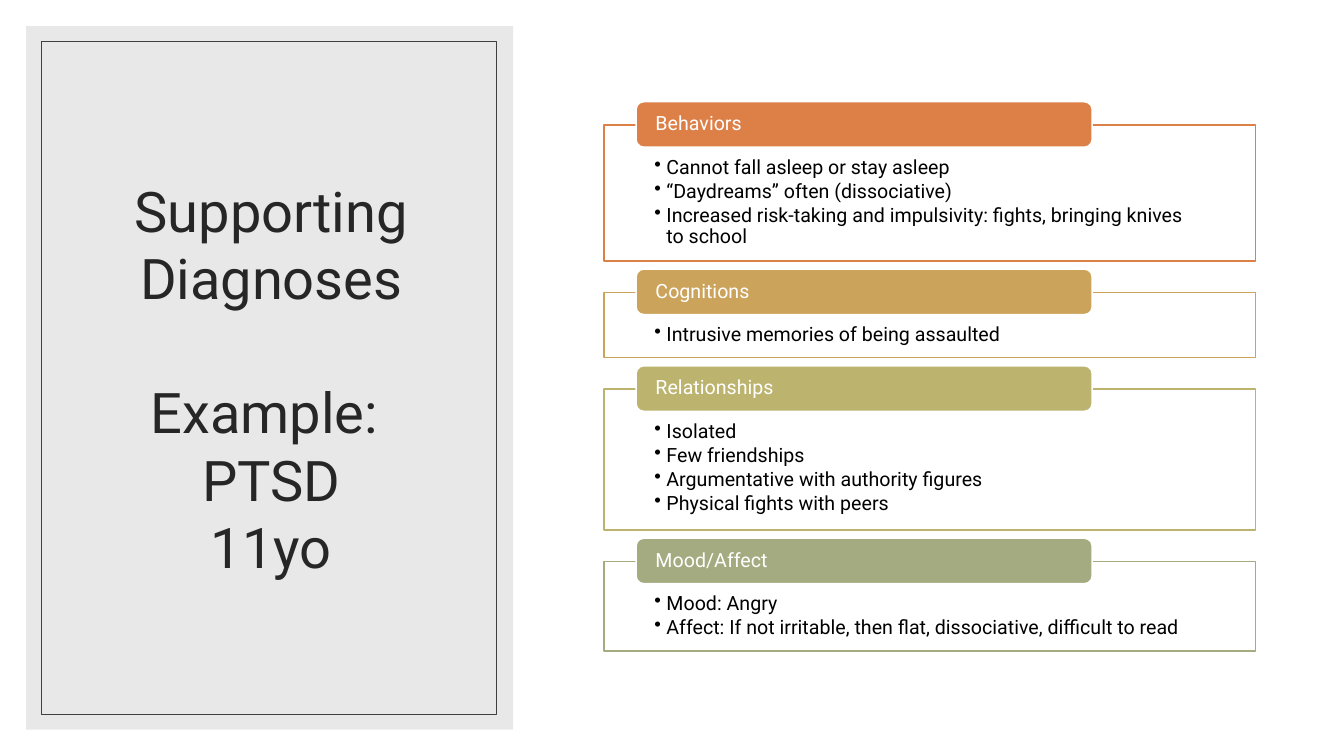
from lxml import etree
from pptx import Presentation
from pptx.dml.color import RGBColor
from pptx.enum.shapes import MSO_SHAPE
from pptx.enum.text import MSO_ANCHOR, PP_ALIGN
from pptx.oxml.ns import qn
from pptx.util import Inches, Pt

RECTANGLE = MSO_SHAPE.RECTANGLE
ROUNDED = MSO_SHAPE.ROUNDED_RECTANGLE
TOP, MIDDLE = MSO_ANCHOR.TOP, MSO_ANCHOR.MIDDLE
LEFT, CENTER = PP_ALIGN.LEFT, PP_ALIGN.CENTER

FONT = "Roboto"
COLORS = {
    "white": "FFFFFF",
    "black": "000000",
    "panel": "E8E8E8",
    "panel_line": "404040",
    "title": "262626",
    "orange": "DD8047",
    "gold": "CCA35B",
    "olive": "BBB36E",
    "sage": "A5AB81",
}
TITLE = ["Supporting Diagnoses", "Example: \vPTSD\v11yo"]
# Heading, colour, frame height in inches, bullets
SECTIONS = [
    ("Behaviors", "orange", 1.35, [
        "Cannot fall asleep or stay asleep",
        "“Daydreams” often (dissociative)",
        "Increased risk-taking and impulsivity: fights, bringing knives to school",
    ]),
    ("Cognitions", "gold", 0.65, ["Intrusive memories of being assaulted"]),
    ("Relationships", "olive", 1.4, [
        "Isolated",
        "Few friendships",
        "Argumentative with authority figures",
        "Physical fights with peers",
    ]),
    ("Mood/Affect", "sage", 0.89, [
        "Mood: Angry",
        "Affect: If not irritable, then flat, dissociative, difficult to read",
    ]),
]
SECTION_GAP = 0.31


def color(name):
    return RGBColor.from_string(COLORS[name])


def add_box(slide, kind, box, fill=None, line=None, line_width=1):
    shape = slide.shapes.add_shape(kind, *(Inches(length) for length in box))
    shape.shadow.inherit = False
    if fill:
        shape.fill.solid()
        shape.fill.fore_color.rgb = color(fill)
    else:
        shape.fill.background()
    if line:
        shape.line.color.rgb = color(line)
        shape.line.width = Pt(line_width)
    else:
        shape.line.fill.background()
    return shape


def write_text(shape, lines, size, text_color, margins, anchor, align, spacing=1.0):
    """Fill the shape with one paragraph per line; margins run left, top, right, bottom."""
    frame = shape.text_frame
    frame.word_wrap = True
    frame.vertical_anchor = anchor
    (frame.margin_left, frame.margin_top,
     frame.margin_right, frame.margin_bottom) = (Inches(margin) for margin in margins)
    frame.text = "\n".join(lines)
    for paragraph in frame.paragraphs:
        paragraph.alignment = align
        paragraph.line_spacing = spacing
        for run in paragraph.runs:
            run.font.name = FONT
            run.font.size = Pt(size)
            run.font.color.rgb = color(text_color)
    return frame.paragraphs


def add_bullet(paragraph):
    properties = paragraph._p.get_or_add_pPr()
    properties.set("marL", str(Inches(0.12)))
    properties.set("indent", str(-Inches(0.12)))
    etree.SubElement(properties, qn("a:buChar")).set("char", "•")


def add_title_panel(slide, left, top, width, height):
    add_box(slide, RECTANGLE, (left, top, width, height), fill="panel")
    inset = 0.15
    border = add_box(
        slide, RECTANGLE,
        (left + inset, top + inset, width - 2 * inset - 0.02, height - 2 * inset),
        line="panel_line", line_width=0.5)
    paragraphs = write_text(border, TITLE, 40, "title", (0.32, 0.05, 0.27, 0.05),
                            MIDDLE, CENTER)
    paragraphs[1].space_before = Pt(48)


def add_section(slide, left, top, width, height, heading, accent, bullets):
    """Draw an outlined bullet box with a heading tab across its top edge."""
    frame = add_box(slide, RECTANGLE, (left, top, width, height), "white", accent)
    paragraphs = write_text(frame, bullets, 14, "black", (0.5, 0.32, 0.5, 0.11),
                            TOP, LEFT, 0.9)
    for paragraph in paragraphs:
        paragraph.space_after = Pt(2)
        add_bullet(paragraph)

    tab = add_box(slide, ROUNDED, (left + 0.32, top - 0.23, width * 0.7, 0.45),
                  accent, "white")
    write_text(tab, [heading], 14, "white", (0.17, 0, 0.17, 0), MIDDLE, LEFT, 0.9)


def add_sections(slide, left, top, width):
    for heading, accent, height, bullets in SECTIONS:
        add_section(slide, left, top, width, height, heading, accent, bullets)
        top += height + SECTION_GAP


def main():
    presentation = Presentation()
    presentation.slide_width = Inches(13.33)
    presentation.slide_height = Inches(7.5)
    slide = presentation.slides.add_slide(presentation.slide_layouts[6])
    add_title_panel(slide, 0.26, 0.26, 4.83, 6.98)
    add_sections(slide, 5.99, 1.24, 6.46)
    presentation.save("out.pptx")


if __name__ == "__main__":
    main()
